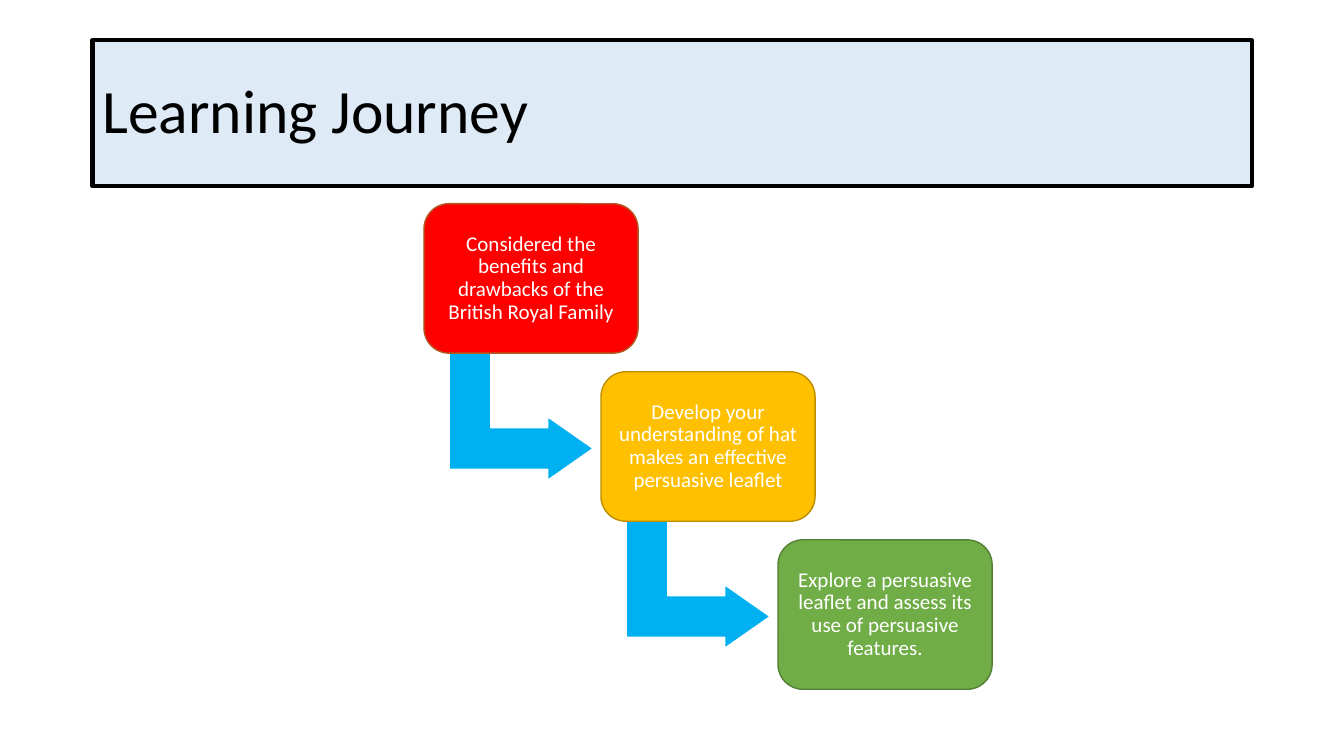
from pptx import Presentation
from pptx.dml.color import RGBColor
from pptx.enum.shapes import MSO_SHAPE
from pptx.enum.text import MSO_ANCHOR, PP_ALIGN
from pptx.util import Inches, Pt

RECTANGLE = MSO_SHAPE.RECTANGLE
ROUNDED = MSO_SHAPE.ROUNDED_RECTANGLE
BENT_ARROW = MSO_SHAPE.BENT_UP_ARROW
MIDDLE = MSO_ANCHOR.MIDDLE
LEFT, CENTER = PP_ALIGN.LEFT, PP_ALIGN.CENTER

COLORS = {
    "black": "000000", "white": "FFFFFF", "banner": "DEEBF7", "arrow": "00B0F0",
    "red": "FF0000", "red_edge": "AF5C24",
    "amber": "FFC000", "amber_edge": "BD8E00",
    "green": "70AD47", "green_edge": "538035",
}
STEPS = [
    ("Considered the benefits and drawbacks of the British Royal Family", "red"),
    ("Develop your understanding of hat makes an effective persuasive leaflet", "amber"),
    ("Explore a persuasive leaflet and assess its use of persuasive features.", "green"),
]
FIRST_LEFT, FIRST_TOP = 31.55, 26.95
STEP_RIGHT, STEP_DOWN = 13.17, 22.23
CARD_WIDTH, CARD_HEIGHT = 15.93, 19.77
ARROW_RIGHT, ARROW_DOWN = 2.5, 18.65
ARROW_WIDTH, ARROW_HEIGHT = 9.45, 19.05


def color(name):
    return RGBColor.from_string(COLORS[name])


def write(shape, text, size, ink, align=LEFT, space_after=0, inset=None):
    frame = shape.text_frame
    frame.word_wrap = True
    frame.vertical_anchor = MIDDLE
    if inset is not None:
        frame.margin_left = frame.margin_right = Inches(inset)
        frame.margin_top = frame.margin_bottom = Inches(inset)
    paragraph = frame.paragraphs[0]
    paragraph.alignment = align
    paragraph.line_spacing = 0.9
    paragraph.space_after = Pt(space_after)
    run = paragraph.add_run()
    run.text = text
    run.font.name = "Calibri"
    run.font.size = Pt(size)
    run.font.color.rgb = color(ink)


class JourneySlide:
    def __init__(self, deck):
        self.width, self.height = deck.slide_width, deck.slide_height
        self.slide = deck.slides.add_slide(deck.slide_layouts[6])

    def block(self, kind, left, top, width, height, fill, edge, weight=1, adjust=()):
        shape = self.slide.shapes.add_shape(
            kind,
            round(self.width * left / 100), round(self.height * top / 100),
            round(self.width * width / 100), round(self.height * height / 100))
        shape.shadow.inherit = False
        shape.fill.solid()
        shape.fill.fore_color.rgb = color(fill)
        shape.line.color.rgb = color(edge)
        shape.line.width = Pt(weight)
        for index, value in enumerate(adjust):
            shape.adjustments[index] = value
        return shape

    def banner(self, text):
        heading = self.block(RECTANGLE, 6.88, 5.33, 86.25, 19.33, "banner", "black", 3)
        write(heading, text, 44, "black")

    def arrow(self, left, top):
        bend = self.block(BENT_ARROW, left + ARROW_RIGHT, top + ARROW_DOWN,
                          ARROW_WIDTH, ARROW_HEIGHT, "arrow", "white",
                          adjust=(0.328, 0.25, 0.358))
        bend.rotation = 90

    def card(self, left, top, text, fill):
        step = self.block(ROUNDED, left, top, CARD_WIDTH, CARD_HEIGHT,
                          fill, fill + "_edge", adjust=(0.167,))
        write(step, text, 15, "white", align=CENTER, space_after=5.25, inset=0.06)


def main():
    deck = Presentation()
    deck.slide_width, deck.slide_height = Inches(13.33), Inches(7.5)
    journey = JourneySlide(deck)
    journey.banner("Learning Journey")
    for index, (text, fill) in enumerate(STEPS):
        left = FIRST_LEFT + index * STEP_RIGHT
        top = FIRST_TOP + index * STEP_DOWN
        if index < len(STEPS) - 1:
            journey.arrow(left, top)
        journey.card(left, top, text, fill)
    deck.save("out.pptx")


if __name__ == "__main__":
    main()
